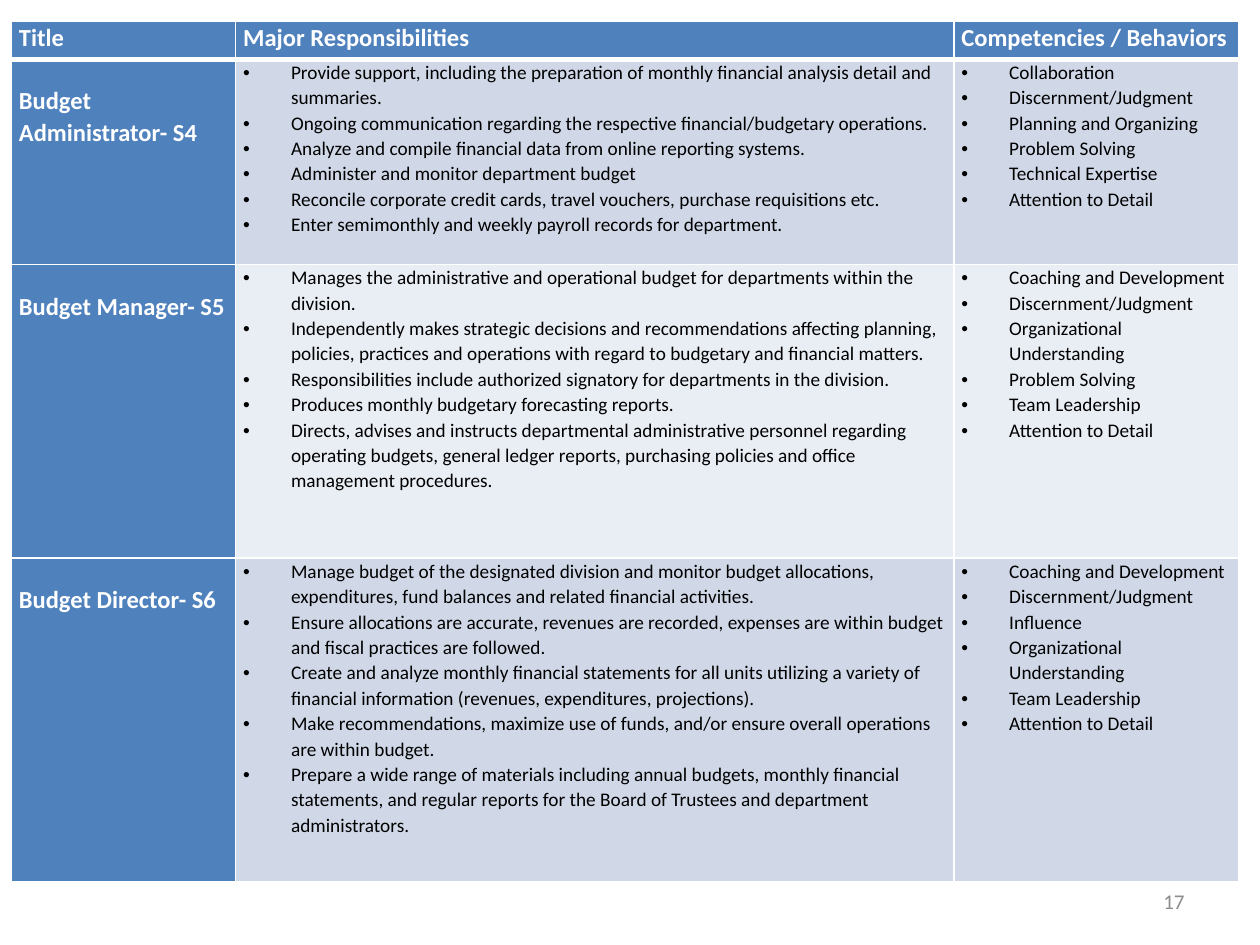
import pptx
import pptx.util
import pptx.dml.color
import pptx.enum.text
import pptx.oxml.ns
from lxml import etree

Inches = pptx.util.Inches
Pt = pptx.util.Pt
ALIGN = pptx.enum.text.PP_ALIGN
ANCHOR = pptx.enum.text.MSO_ANCHOR

COLORS = {
    "heading": "4F81BD",
    "band_dark": "D0D8E8",
    "band_light": "E9EDF4",
    "white": "FFFFFF",
    "black": "000000",
    "gray": "8C8C8C",
}
FONT = "Calibri"

HEADINGS = ["Title", "Major Responsibilities", "Competencies / Behaviors"]
ROLES = [
    ("Budget Administrator- S4", [
        "Provide support, including the preparation of monthly financial analysis detail and summaries.",
        "Ongoing communication regarding the respective financial/budgetary operations.",
        "Analyze and compile financial data from online reporting systems.",
        "Administer and monitor department budget",
        "Reconcile corporate credit cards, travel vouchers, purchase requisitions etc.",
        "Enter semimonthly and weekly payroll records for department.",
    ], ["Collaboration", "Discernment/Judgment", "Planning and Organizing",
        "Problem Solving", "Technical Expertise", "Attention to Detail"]),
    ("Budget Manager- S5", [
        "Manages the administrative and operational budget for departments within the division.",
        "Independently makes strategic decisions and recommendations affecting planning, policies, "
        "practices and operations with regard to budgetary and financial matters.",
        "Responsibilities include authorized signatory for departments in the division.",
        "Produces monthly budgetary forecasting reports.",
        "Directs, advises and instructs departmental administrative personnel regarding operating "
        "budgets, general ledger reports, purchasing policies and office management procedures.",
    ], ["Coaching and Development", "Discernment/Judgment", "Organizational Understanding",
        "Problem Solving", "Team Leadership", "Attention to Detail"]),
    ("Budget Director- S6", [
        "Manage budget of the designated division and monitor budget allocations, expenditures, "
        "fund balances and related financial activities.",
        "Ensure allocations are accurate, revenues are recorded, expenses are within budget and "
        "fiscal practices are followed.",
        "Create and analyze monthly financial statements for all units utilizing a variety of "
        "financial information (revenues, expenditures, projections).",
        "Make recommendations, maximize use of funds, and/or ensure overall operations are within budget.",
        "Prepare a wide range of materials including annual budgets, monthly financial statements, "
        "and regular reports for the Board of Trustees and department administrators.",
    ], ["Coaching and Development", "Discernment/Judgment", "Influence",
        "Organizational Understanding", "Team Leadership", "Attention to Detail"]),
]


def rgb(name):
    return pptx.dml.color.RGBColor.from_string(COLORS[name])


def add_child(parent, tag, **attributes):
    return etree.SubElement(parent, pptx.oxml.ns.qn(tag), attributes)


def write(frame, lines, size=11, color="black", bold=False, align=None,
          spacing=None, bullet=False):
    """Write one paragraph per line, all in the same format."""
    frame.word_wrap = True
    for index, line in enumerate(lines):
        paragraph = frame.add_paragraph() if index else frame.paragraphs[0]
        paragraph.alignment = align
        if spacing:
            paragraph.line_spacing = spacing
        if bullet:
            properties = paragraph._p.get_or_add_pPr()
            properties.set("marL", str(Inches(0.38)))
            properties.set("indent", str(-Inches(0.38)))
            add_child(properties, "a:buFont", typeface="Arial")
            add_child(properties, "a:buChar", char="•")
        run = paragraph.add_run()
        run.text = line
        run.font.name = FONT
        run.font.size = Pt(size)
        run.font.bold = bold
        run.font.color.rgb = rgb(color)


class SlideBuilder:
    def __init__(self, slide):
        self.slide = slide

    def table(self, left, top, widths, heights):
        table = self.slide.shapes.add_table(
            len(heights), len(widths), Inches(left), Inches(top),
            Inches(sum(widths)), Inches(sum(heights))).table
        table.first_row = table.horz_banding = False
        for column, width in zip(table.columns, widths):
            column.width = Inches(width)
        for row, height in zip(table.rows, heights):
            row.height = Inches(height)
        return table

    def cell(self, cell, lines, fill, top_margin=0, top_border=1, bottom_border=1, **text_format):
        cell.margin_left = cell.margin_right = Inches(0.06)
        cell.margin_top = Inches(top_margin)
        cell.margin_bottom = 0
        write(cell.text_frame, lines, spacing=1.07, **text_format)
        # Borders come before the fill in the cell properties
        properties = cell._tc.get_or_add_tcPr()
        borders = {"a:lnL": 1, "a:lnR": 1, "a:lnT": top_border, "a:lnB": bottom_border}
        for tag, width in borders.items():
            line = add_child(properties, tag, w=str(Pt(width)))
            add_child(add_child(line, "a:solidFill"), "a:srgbClr", val=COLORS["white"])
        cell.fill.solid()
        cell.fill.fore_color.rgb = rgb(fill)

    def text(self, left, top, width, height, line, **text_format):
        frame = self.slide.shapes.add_textbox(
            Inches(left), Inches(top), Inches(width), Inches(height)).text_frame
        frame.vertical_anchor = ANCHOR.MIDDLE
        write(frame, [line], **text_format)


def main():
    deck = pptx.Presentation()
    deck.slide_width, deck.slide_height = Inches(10), Inches(7.5)
    builder = SlideBuilder(deck.slides.add_slide(deck.slide_layouts[6]))

    # Job table: heading row
    jobs = builder.table(0.09, 0.17, [1.78, 5.7, 2.26], [0.3, 1.63, 2.33, 2.57])
    heading_format = dict(fill="heading", size=14, color="white", bold=True)
    for column, heading in enumerate(HEADINGS):
        builder.cell(jobs.cell(0, column), [heading], bottom_border=3, **heading_format)

    # Job table: one row per role, in alternating bands
    for row, (role, responsibilities, competencies) in enumerate(ROLES, start=1):
        band = "band_dark" if row % 2 else "band_light"
        top_border = 3 if row == 1 else 1
        builder.cell(jobs.cell(row, 0), [role], top_margin=0.2,
                     top_border=top_border, **heading_format)
        for column, points in enumerate([responsibilities, competencies], start=1):
            builder.cell(jobs.cell(row, column), points, band,
                         top_border=top_border, bullet=True)

    # Page number
    builder.text(7.17, 6.95, 2.33, 0.4, "17", size=12, color="gray", align=ALIGN.RIGHT)

    deck.save("out.pptx")


if __name__ == "__main__":
    main()
